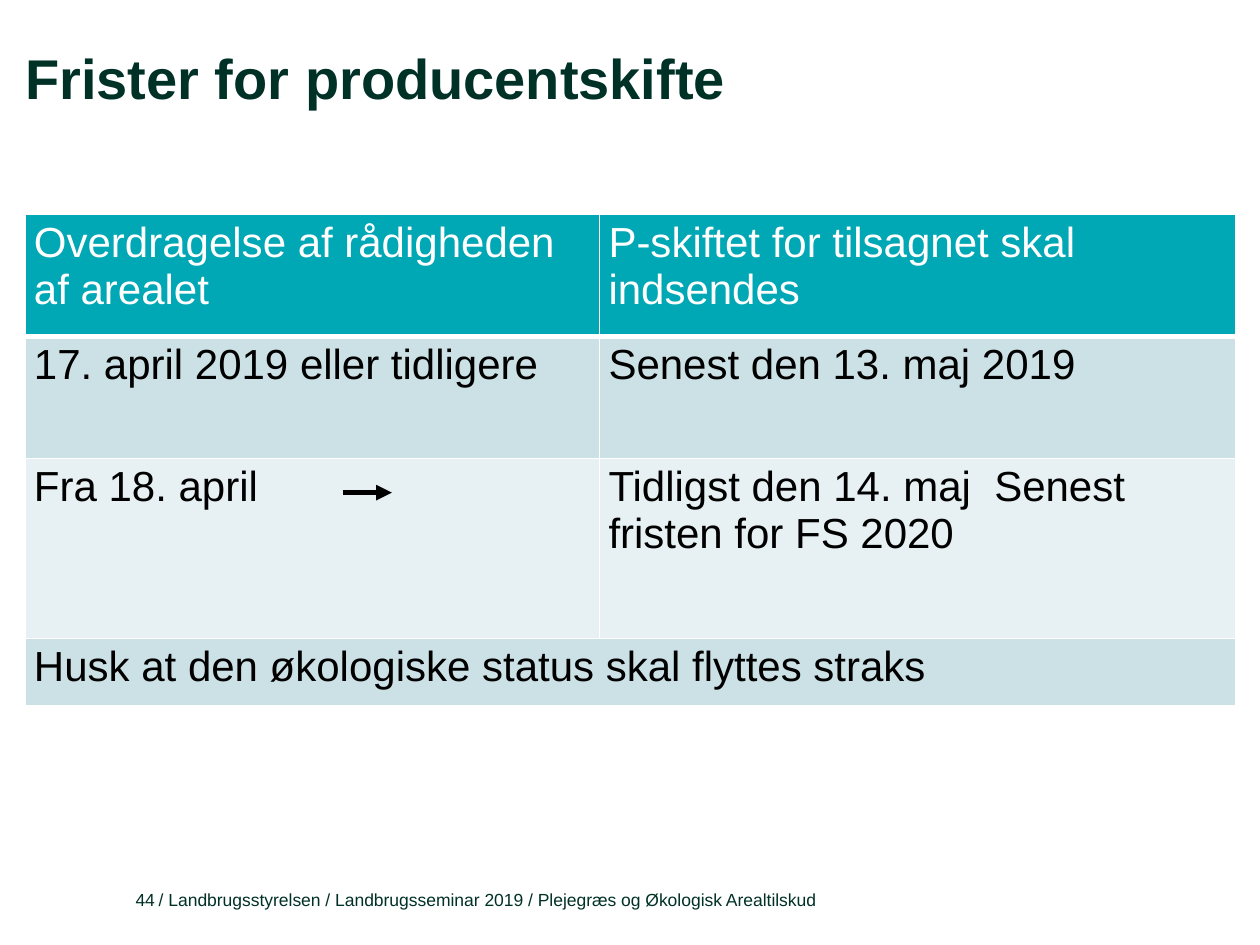
from lxml import etree
from pptx import Presentation
from pptx.dml.color import RGBColor
from pptx.enum.shapes import MSO_CONNECTOR
from pptx.enum.text import MSO_ANCHOR, MSO_AUTO_SIZE, PP_ALIGN
from pptx.oxml.ns import qn
from pptx.util import Inches, Pt

LEFT, RIGHT = PP_ALIGN.LEFT, PP_ALIGN.RIGHT
TOP, BOTTOM = MSO_ANCHOR.TOP, MSO_ANCHOR.BOTTOM
NO_FIT = MSO_AUTO_SIZE.NONE
STRAIGHT = MSO_CONNECTOR.STRAIGHT

GREEN = RGBColor(0x00, 0x31, 0x27)
TEAL = RGBColor(0x00, 0xA7, 0xB5)
MIST = RGBColor(0xCC, 0xE1, 0xE5)
PALE = RGBColor(0xE7, 0xF1, 0xF3)
WHITE = RGBColor(0xFF, 0xFF, 0xFF)
BLACK = RGBColor(0x00, 0x00, 0x00)

COLS = [4.56, 5.05]
# Height, fill, text colour, texts; a single text spans the row
ROWS = [
    (0.97, TEAL, WHITE, ["Overdragelse af rådigheden af arealet",
                         "P-skiftet for tilsagnet skal indsendes"]),
    (0.97, MIST, BLACK, ["17. april 2019 eller tidligere",
                         "Senest den 13. maj 2019"]),
    (1.43, PALE, BLACK, ["Fra 18. april",
                         "Tidligst den 14. maj  Senest fristen for FS 2020"]),
    (0.53, MIST, BLACK, ["Husk at den økologiske status skal flyttes straks"]),
]


def write(frame, text, size=24, color=BLACK, bold=False, align=LEFT, line=None):
    para = frame.paragraphs[0]
    para.alignment = align
    if line:
        para.line_spacing = line
    run = para.add_run()
    run.text = text
    font = run.font
    font.name, font.size, font.bold = "Arial", Pt(size), bold
    font.color.rgb = color


def set_frame(shape, anchor):
    frame = shape.text_frame
    frame.word_wrap = True
    frame.auto_size = NO_FIT
    frame.vertical_anchor = anchor
    frame.margin_left = frame.margin_right = 0
    frame.margin_top = frame.margin_bottom = 0
    return frame


def add_title(slide, text):
    title = slide.shapes.title
    title.left, title.top = Inches(0.2), Inches(0.4)
    title.width, title.height = Inches(8.58), Inches(0.73)
    write(set_frame(title, TOP), text, size=32, color=GREEN, bold=True, line=0.91)


def add_note(slide, text, left, width, align=LEFT):
    box = slide.shapes.add_textbox(Inches(left), Inches(7), Inches(width), Inches(0.22))
    write(set_frame(box, BOTTOM), text, size=10, color=GREEN, align=align)


def set_borders(cell, base):
    props = cell._tc.get_or_add_tcPr()
    for side, width in (("L", 1), ("R", 1), ("T", 1), ("B", base)):
        edge = etree.SubElement(props, qn("a:ln" + side), w=str(Pt(width)))
        fill = etree.SubElement(edge, qn("a:solidFill"))
        etree.SubElement(fill, qn("a:srgbClr"), val=str(WHITE))


def add_grid(slide):
    table = slide.shapes.add_table(
        len(ROWS), len(COLS), Inches(0.2), Inches(1.7),
        Inches(sum(COLS)), Inches(sum(row[0] for row in ROWS))).table
    for col, width in zip(table.columns, COLS):
        col.width = Inches(width)
    for r, (height, fill, color, texts) in enumerate(ROWS):
        table.rows[r].height = Inches(height)
        for c in range(len(COLS)):
            cell = table.cell(r, c)
            cell.margin_left = cell.margin_right = Inches(0.07)
            cell.margin_top = cell.margin_bottom = Inches(0.04)
            set_borders(cell, 3 if r == 0 else 1)
            cell.fill.solid()
            cell.fill.fore_color.rgb = fill
            if c < len(texts):
                write(cell.text_frame, texts[c], color=color)
        if len(texts) == 1:
            table.cell(r, 0).merge(table.cell(r, len(COLS) - 1))


def add_arrow(slide, start, end, y):
    arrow = slide.shapes.add_connector(
        STRAIGHT, Inches(start), Inches(y), Inches(end), Inches(y))
    arrow.line.color.rgb = BLACK
    arrow.line.width = Pt(3)
    etree.SubElement(arrow.line._get_or_add_ln(), qn("a:tailEnd"), type="triangle")
    etree.SubElement(arrow._element.spPr, qn("a:effectLst"))


def main():
    deck = Presentation()
    deck.slide_width, deck.slide_height = Inches(10), Inches(7.5)
    slide = deck.slides.add_slide(deck.slide_layouts[5])

    add_title(slide, "Frister for producentskifte")

    # Footer
    add_note(slide, "/ Landbrugsstyrelsen / Landbrugsseminar 2019 / "
                    "Plejegræs og Økologisk Arealtilskud", 1.26, 5.71)
    add_note(slide, "44", 0.9, 0.33, align=RIGHT)

    # Deadlines, with the arrow after "18. april"
    add_grid(slide)
    add_arrow(slide, 2.72, 3.11, 3.91)

    deck.save("out.pptx")


if __name__ == "__main__":
    main()
